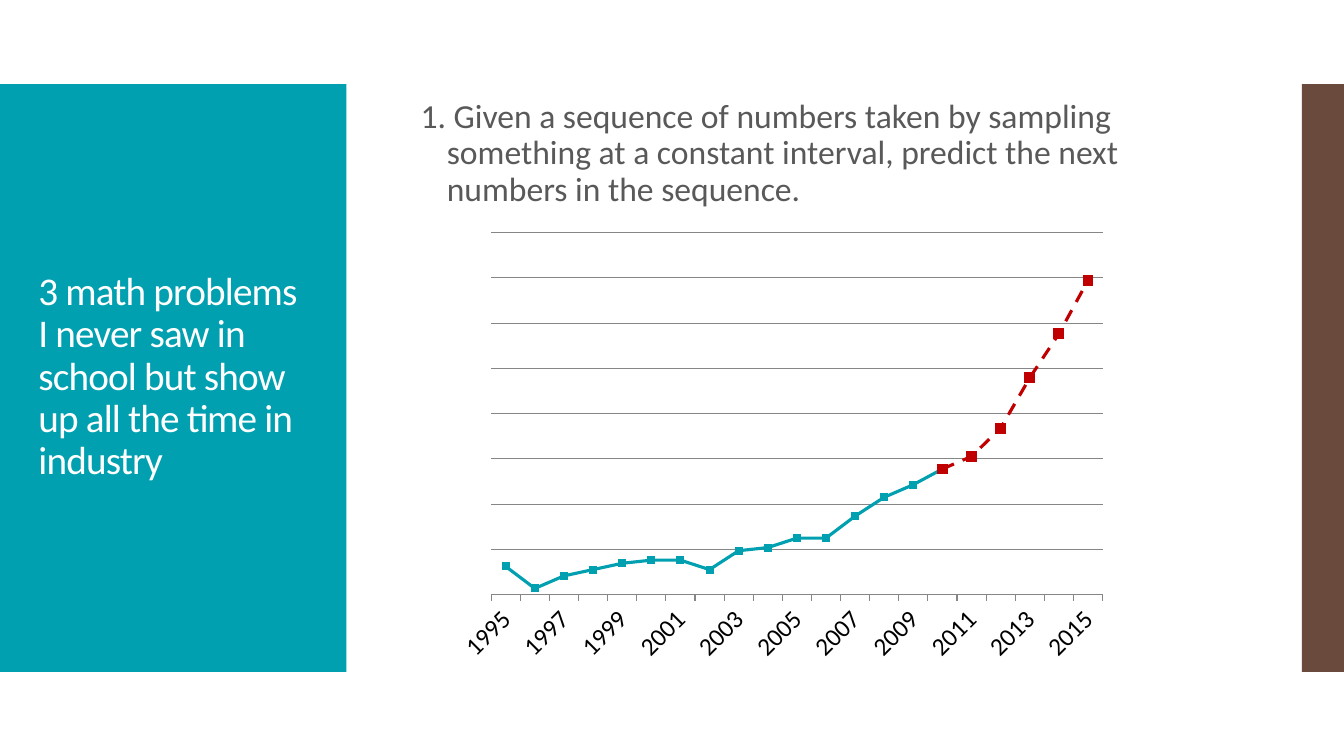
from lxml import etree
from pptx import Presentation
from pptx.chart.data import CategoryChartData
from pptx.dml.color import RGBColor
from pptx.enum.chart import XL_CHART_TYPE, XL_MARKER_STYLE, XL_TICK_LABEL_POSITION, XL_TICK_MARK
from pptx.enum.dml import MSO_LINE
from pptx.enum.shapes import MSO_SHAPE
from pptx.enum.text import MSO_ANCHOR, MSO_AUTO_SIZE, PP_ALIGN
from pptx.oxml import parse_xml
from pptx.oxml.ns import nsdecls, qn
from pptx.util import Pt

PX = 9525
FONT = "Calibri"
COLORS = {"teal": "00A0B0", "brown": "6A4A3C", "red": "C00000",
          "grey": "595959", "grid": "868686", "white": "FFFFFF", "black": "000000"}
RECT = MSO_SHAPE.RECTANGLE
LINE = XL_CHART_TYPE.LINE_MARKERS
SQUARE = XL_MARKER_STYLE.SQUARE
NO_LABEL = XL_TICK_LABEL_POSITION.NONE
TICK_OUT, TICK_NONE = XL_TICK_MARK.OUTSIDE, XL_TICK_MARK.NONE
DASH, SOLID = MSO_LINE.DASH, MSO_LINE.SOLID
LEFT, TOP, MIDDLE = PP_ALIGN.LEFT, MSO_ANCHOR.TOP, MSO_ANCHOR.MIDDLE
NO_FIT = MSO_AUTO_SIZE.NONE


def rgb(name):
    return RGBColor.from_string(COLORS[name])


def write(holder, text, box, size, color, anchor=TOP, before=0, hang=0, track=0):
    """Place a placeholder at box (px) and fill it with one formatted paragraph."""
    holder.left, holder.top, holder.width, holder.height = [n * PX for n in box]
    frame = holder.text_frame
    frame.word_wrap, frame.auto_size = True, NO_FIT
    frame.vertical_anchor = anchor
    para = frame.paragraphs[0]
    para.alignment, para.line_spacing = LEFT, 0.9
    para.space_before = Pt(before)
    props = para._p.get_or_add_pPr()
    props.set("marL", str(hang * PX))
    props.set("indent", str(-hang * PX))
    etree.SubElement(props, qn("a:buNone"))
    run = para.add_run()
    run.text = text
    run.font.name, run.font.size = FONT, Pt(size)
    run.font.color.rgb = rgb(color)
    run._r.get_or_add_rPr().set("spc", str(track))


deck = Presentation()
deck.slide_width, deck.slide_height = 1280 * PX, 720 * PX
slide = deck.slides.add_slide(deck.slide_layouts[1])
shapes = slide.shapes

# Side bars, behind the text
for left, width, color in [(0, 330, "teal"), (1240, 40, "brown")]:
    bar = shapes.add_shape(RECT, left * PX, 80 * PX, width * PX, 560 * PX)
    bar.shadow.inherit = False
    bar.fill.solid()
    bar.fill.fore_color.rgb = rgb(color)
    bar.line.fill.background()
    bar.element.getparent().insert(2, bar.element)

# Title and problem
write(shapes.title, "3 math problems I never saw in school but show up all the time in industry",
      (27, 118, 278, 483), 28, "white", anchor=MIDDLE, track=-60)
write(slide.placeholders[1],
      "1. Given a sequence of numbers taken by sampling something at a constant interval, "
      "predict the next numbers in the sequence.",
      (391, 90, 783, 538), 24, "grey", before=12, hang=25)

# Known values, then the forecast from the last known year on
known = [9, 2, 6, 8, 10, 11, 11, 8, 14, 15, 18, 18, 25, 31, 35, 40]
guess = [40, 44, 53, 69, 83, 100]
data = CategoryChartData()
data.categories = [str(year) for year in range(1995, 2016)]
data.add_series("Series 1", known + [None] * (len(guess) - 1))
data.add_series("Series 2", [None] * (len(known) - 1) + guess)
chart = shapes.add_chart(LINE, 423 * PX, 213 * PX, 640 * PX, 426 * PX, data).chart
chart.has_legend = chart.has_title = False
chart.font.name, chart.font.size = FONT, Pt(18)
chart.font.color.rgb = rgb("black")
plot = chart.plots[0]
plot.vary_by_categories = False

styles = [("teal", 5, SOLID), ("red", 7, DASH)]
for series, (color, size, dash) in zip(plot.series, styles):
    series.smooth = False
    series.format.line.width = Pt(2.25)
    series.format.line.color.rgb = rgb(color)
    series.format.line.dash_style = dash
    mark = series.marker
    mark.style, mark.size = SQUARE, size
    mark.format.fill.solid()
    mark.format.fill.fore_color.rgb = rgb(color)
    mark.format.line.color.rgb = rgb(color)

# Axes
step = 14.4
values = chart.value_axis
values.minimum_scale, values.maximum_scale, values.major_unit = 0, 8 * step, step
values.major_tick_mark = TICK_NONE
values.tick_label_position = NO_LABEL
values.format.line.fill.background()
values.has_major_gridlines = True
years = chart.category_axis
years.major_tick_mark = TICK_OUT
for line in (values.major_gridlines.format.line, years.format.line):
    line.color.rgb = rgb("grid")
    line.width = Pt(0.75)
years.tick_labels.font.size = Pt(18)
axis = years._element
axis.find(qn("c:txPr")).find(qn("a:bodyPr")).set("rot", "-2700000")
skip = parse_xml(f'<c:tickLblSkip {nsdecls("c")} val="2"/>')
axis.find(qn("c:noMultiLvlLbl")).addprevious(skip)

# Inner plot area, as shares of the chart
area = chart._chartSpace.chart.plotArea
for old in area.findall(qn("c:layout")):
    area.remove(old)
layout = etree.Element(qn("c:layout"))
manual = etree.SubElement(layout, qn("c:manualLayout"))
for tag, val in [("layoutTarget", "inner"), ("xMode", "edge"), ("yMode", "edge"),
                 ("x", "0.07"), ("y", "0.02"), ("w", "0.91"), ("h", "0.81")]:
    etree.SubElement(manual, qn("c:" + tag)).set("val", val)
area.insert(0, layout)

deck.save("out.pptx")
